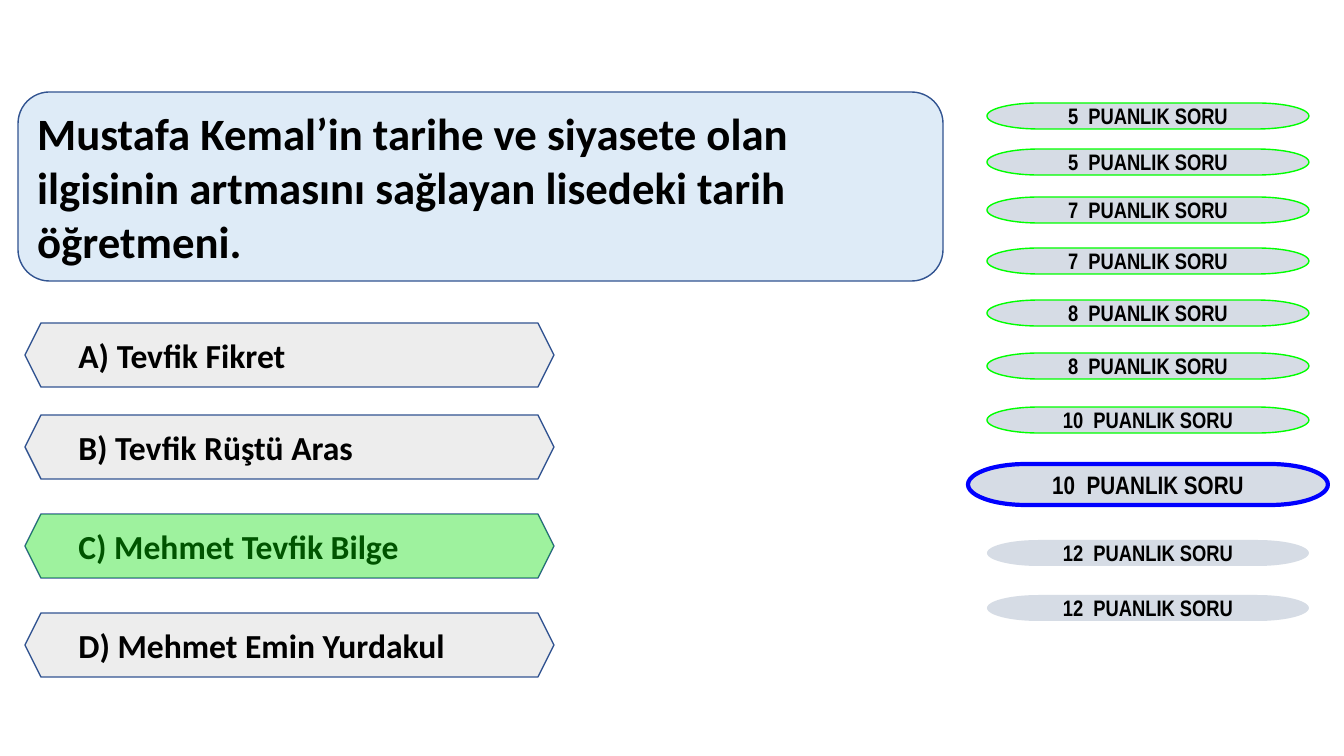
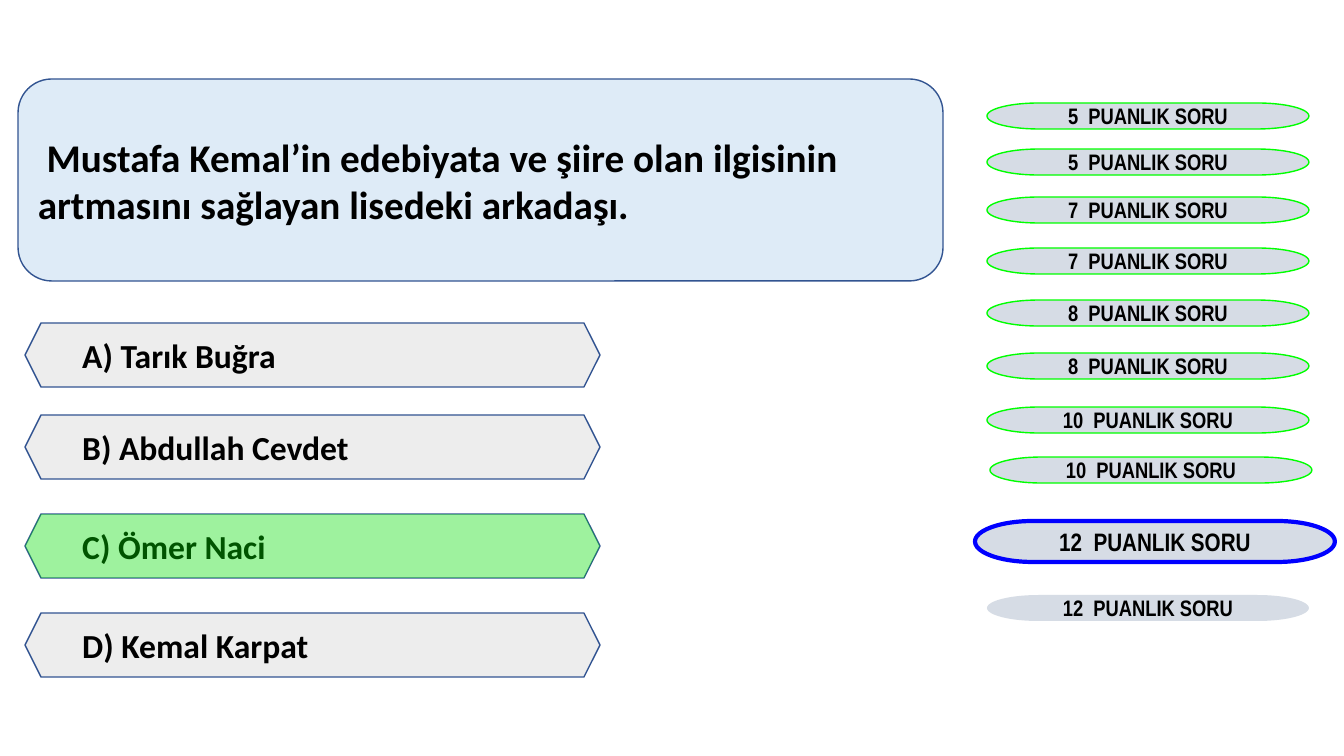
from dataclasses import dataclass

from lxml import etree
from pptx import Presentation, util as u
from pptx.dml.color import RGBColor
from pptx.enum import shapes, text
from pptx.oxml import ns

EMU_PER_PX = u.Inches(1) / 100.8
SLIDE_W, SLIDE_H = 1344, 756


@dataclass(frozen=True)
class Theme:
    question: str = "DEEBF7"
    answer: str = "EDEDED"
    edge: str = "325491"
    correct: str = "00FF00"
    correct_alpha: int = 33
    rung: str = "D6DCE5"
    passed: str = "00FF00"
    active: str = "0000FF"
    ink: str = "000000"
    body_font: str = "Calibri"
    rung_font: str = "Arial Narrow"
    answer_size: int = 24
    rung_size: int = 16
    active_size: int = 18
    thin: int = 1
    thick: int = 3


THEME = Theme()
KIND = shapes.MSO_SHAPE
LEFT, CENTER = text.PP_ALIGN.LEFT, text.PP_ALIGN.CENTER

ANSWER_TOPS = (0, 92, 191, 290)
ANSWER_H = 64
RUNG_POINTS = (5, 5, 7, 7, 8, 8, 10, 10, 12, 12)
RUNG_TOPS = (0, 46, 94, 145, 197, 250, 304, 354, 437, 492)
RUNG_SHIFTS = {7: 3}
RUNG_H = 26
ACTIVE_W, ACTIVE_H = 360, 41

LADDER_BOX = (987, 103, 322, 518)
QUIZ = (
    dict(question="Mustafa Kemal’in tarihe ve siyasete olan ilgisinin artmasını "
                  "sağlayan lisedeki tarih öğretmeni.",
         question_box=(18, 92, 925, 189), question_size=32,
         answers=("A) Tevfik Fikret", "B) Tevfik Rüştü Aras",
                  "C) Mehmet Tevfik Bilge", "D) Mehmet Emin Yurdakul"),
         answers_box=(25, 323, 529, 354), correct=2,
         active=7, active_at=(-19, 361)),
    dict(question=" Mustafa Kemal’in edebiyata ve şiire olan ilgisinin artmasını "
                  "sağlayan lisedeki arkadaşı.",
         question_box=(18, 79, 925, 202), question_size=28,
         answers=("A) Tarık Buğra", "B) Abdullah Cevdet",
                  "C) Ömer Naci", "D) Kemal Karpat"),
         answers_box=(25, 323, 575, 354), correct=2,
         active=8, active_at=(-12, 418)),
)


def px(n):
    return round(n * EMU_PER_PX)


def add_box(slide, kind, box, fill, line=None, width=THEME.thin):
    sp = slide.shapes.add_shape(kind, *map(px, box))
    sp.shadow.inherit = False
    sp.fill.solid()
    sp.fill.fore_color.rgb = RGBColor.from_string(fill)
    if line:
        sp.line.color.rgb = RGBColor.from_string(line)
        sp.line.width = u.Pt(width)
    else:
        sp.line.fill.background()
    return sp


def write(sp, words, font, size, align=LEFT, inset=None):
    tf = sp.text_frame
    frame = dict(word_wrap=True, vertical_anchor=text.MSO_ANCHOR.MIDDLE)
    if inset is not None:
        frame.update({f"margin_{side}": px(inset)
                      for side in ("left", "top", "right", "bottom")})
    for name, value in frame.items():
        setattr(tf, name, value)
    p = tf.paragraphs[0]
    p.alignment = align
    r = p.add_run()
    r.text = words
    for name, value in dict(name=font, size=u.Pt(size), bold=True).items():
        setattr(r.font, name, value)
    r.font.color.rgb = RGBColor.from_string(THEME.ink)


def set_alpha(sp, percent):
    color = sp.fill._xPr.find(".//" + ns.qn("a:srgbClr"))
    etree.SubElement(color, ns.qn("a:alpha")).set("val", str(percent * 1000))


def add_question(slide, box, words, size):
    sp = add_box(slide, KIND.ROUNDED_RECTANGLE, box, THEME.question, THEME.edge)
    write(sp, words, THEME.body_font, size)


def add_answers(slide, box, answers, correct):
    """Stack the answers and lay a translucent tint over the correct one."""
    x, y, w, _ = box
    rows = [(x, y + top, w, ANSWER_H) for top in ANSWER_TOPS]
    for row, words in zip(rows, answers):
        sp = add_box(slide, KIND.HEXAGON, row, THEME.answer, THEME.edge)
        write(sp, words, THEME.body_font, THEME.answer_size, inset=4)
    tint = add_box(slide, KIND.HEXAGON, rows[correct], THEME.correct)
    set_alpha(tint, THEME.correct_alpha)


def add_ladder(slide, box, active, active_at):
    """Draw the score rungs: passed ones outlined, the active one enlarged."""
    x, y, w, _ = box
    for i, (points, top) in enumerate(zip(RUNG_POINTS, RUNG_TOPS)):
        rung = (x + RUNG_SHIFTS.get(i, 0), y + top, w, RUNG_H)
        line, width, size = None, THEME.thin, THEME.rung_size
        if i < active:
            line = THEME.passed
        elif i == active:
            dx, dy = active_at
            rung = (x + dx, y + dy, ACTIVE_W, ACTIVE_H)
            line, width, size = THEME.active, THEME.thick, THEME.active_size
        sp = add_box(slide, KIND.FLOWCHART_TERMINATOR, rung, THEME.rung, line, width)
        write(sp, f"{points}  PUANLIK SORU", THEME.rung_font, size, CENTER)


def add_quiz_slide(prs, quiz):
    slide = prs.slides.add_slide(prs.slide_layouts[6])
    add_question(slide, quiz["question_box"], quiz["question"], quiz["question_size"])
    add_answers(slide, quiz["answers_box"], quiz["answers"], quiz["correct"])
    add_ladder(slide, LADDER_BOX, quiz["active"], quiz["active_at"])


def main():
    prs = Presentation()
    prs.slide_width, prs.slide_height = px(SLIDE_W), px(SLIDE_H)
    for quiz in QUIZ:
        add_quiz_slide(prs, quiz)
    prs.save("out.pptx")


if __name__ == "__main__":
    main()
